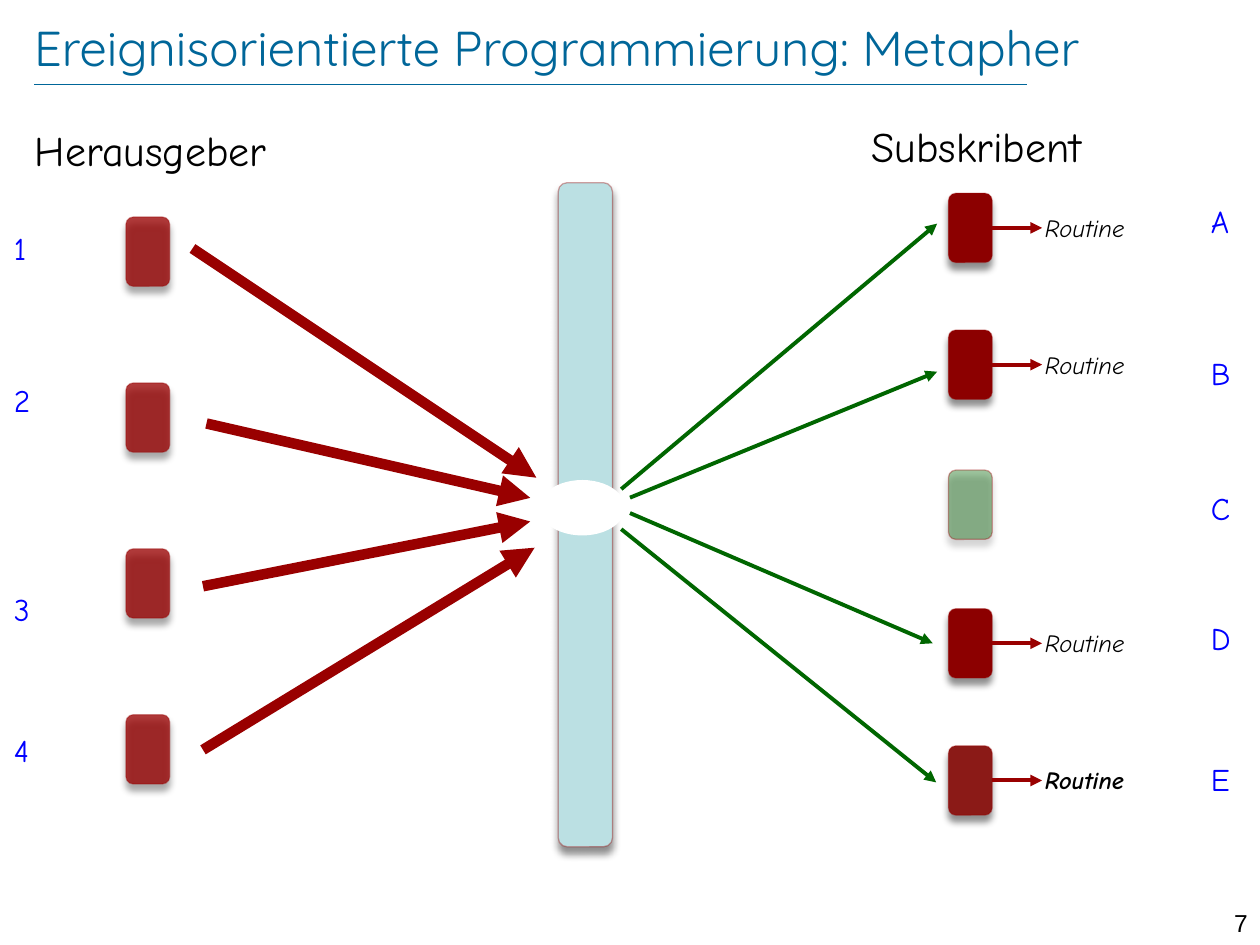
from lxml import etree
from pptx import Presentation
from pptx.dml.color import RGBColor
from pptx.enum import shapes, text
from pptx.oxml import ns, parse_xml
from pptx.util import Pt

COLORS = {
    "heading": "006699",
    "text": "000000",
    "label": "0000FF",
    "event": "990000",
    "notify": "006600",
    "active": "8C0000",
    "mixed": "8B1A17",
    "bus": "BBE0E3",
    "gap": "FFFFFF",
}
HAND_FONT = "Comic Neue"
NODE_WIDTH, NODE_HEIGHT = 25, 39.6
PUBLISHER_LEFT, PUBLISHER_TOP, PUBLISHER_PITCH = 72, 124, 94.8
SUBSCRIBER_LEFT = 542

SHADOW = (
    f'<a:effectLst {ns.nsdecls("a")}>'
    '<a:outerShdw blurRad="50800" dist="50800" dir="5400000" rotWithShape="0">'
    '<a:srgbClr val="000000"><a:alpha val="43000"/></a:srgbClr>'
    "</a:outerShdw></a:effectLst>"
)

# Label top, arrow start, arrow end
PUBLISHERS = [
    ("1", 131, (110, 142), (306.5, 273)),
    ("2", 218, (118, 242), (303, 284.5)),
    ("3", 337, (116, 335), (303, 298)),
    ("4", 417.6, (116, 428.5), (305.5, 313)),
]

# Label, label top, node top, fill, opacity, arrow ends, bold routine
SUBSCRIBERS = [
    ("A", 115.2, 110.4, "active", 100, ((355, 279.5), (535.5, 127.8)), False),
    ("B", 202.3, 188.6, "active", 100, ((360, 284.4), (535.5, 212.4)), False),
    ("C", 279.4, 268.6, "notify", 38, None, False),
    ("D", 353.5, 347.8, "active", 100, ((360, 293.2), (533, 367.6)), False),
    ("E", 434.2, 426.2, "mixed", 100, ((355, 302.4), (535, 447.1)), True),
]


def rgb(color):
    return RGBColor.from_string(COLORS[color])


def add_label(slide, words, left, top, width, height, size, color="text",
              font=HAND_FONT, bold=False, italic=False):
    box = slide.shapes.add_textbox(Pt(left), Pt(top), Pt(width), Pt(height))
    frame = box.text_frame
    frame.word_wrap = True
    frame.margin_left = frame.margin_right = 0
    frame.margin_top = frame.margin_bottom = 0
    run = frame.paragraphs[0].add_run()
    run.text = words
    run.font.name = font
    run.font.size = Pt(size)
    run.font.bold = bold
    run.font.italic = italic
    run.font.color.rgb = rgb(color)
    return frame


def add_node(slide, left, top, width, height, color, opacity):
    """Rounded box with a faint outline and a soft shadow below."""
    node = slide.shapes.add_shape(
        shapes.MSO_SHAPE.ROUNDED_RECTANGLE,
        Pt(left), Pt(top), Pt(width), Pt(height))
    node.fill.solid()
    node.fill.fore_color.rgb = rgb(color)
    node.line.color.rgb = rgb("event")
    node.line.width = Pt(0.75)
    properties = node.element.spPr
    tints = list(properties.iter(ns.qn("a:srgbClr")))
    for tint, percent in zip(tints, (opacity, 34)):
        etree.SubElement(tint, ns.qn("a:alpha")).set("val", str(percent * 1000))
    properties.append(parse_xml(SHADOW))
    return node


def add_line(slide, start, end, color, width, arrow=True):
    line = slide.shapes.add_connector(
        shapes.MSO_CONNECTOR.STRAIGHT,
        Pt(start[0]), Pt(start[1]), Pt(end[0]), Pt(end[1]))
    line.line.color.rgb = rgb(color)
    line.line.width = Pt(width)
    if arrow:
        outline = line.line._get_or_add_ln()
        etree.SubElement(outline, ns.qn("a:tailEnd")).set("type", "triangle")
    etree.SubElement(line.element.spPr, ns.qn("a:effectLst"))
    return line


def add_header(slide):
    add_line(slide, (19.5, 48.2), (586.8, 48.2), "heading", 0.25, arrow=False)
    title = add_label(slide, "Ereignisorientierte Programmierung: Metapher",
                      19.5, 9.4, 652.3, 34.6, 28, "heading", "Quicksand")
    title.vertical_anchor = text.MSO_ANCHOR.MIDDLE
    number = add_label(slide, "7", 680, 519, 33, 17, 14, font="Arial")
    number.paragraphs[0].alignment = text.PP_ALIGN.RIGHT
    add_label(slide, "Herausgeber", 20, 71.3, 211, 28.8, 24)
    add_label(slide, "Subskribent", 498.2, 69.1, 151.2, 28.8, 24)


def add_bus(slide):
    """Vertical bar with the opening that all events pass through."""
    add_node(slide, 319, 104.4, 31, 379.5, "bus", 100)
    opening = slide.shapes.add_shape(
        shapes.MSO_SHAPE.OVAL, Pt(308.2), Pt(274.3), Pt(49), Pt(31.7))
    opening.shadow.inherit = False
    opening.fill.solid()
    opening.fill.fore_color.rgb = rgb("gap")
    opening.line.fill.background()


def add_publishers(slide):
    for row, (label, label_top, start, end) in enumerate(PUBLISHERS):
        top = PUBLISHER_TOP + row * PUBLISHER_PITCH
        add_node(slide, PUBLISHER_LEFT, top, NODE_WIDTH, NODE_HEIGHT, "event", 77)
        add_line(slide, start, end, "event", 6)
        add_label(slide, label, 8, label_top, 16, 21.6, 18, "label")


def add_subscribers(slide):
    right = SUBSCRIBER_LEFT + NODE_WIDTH
    for label, label_top, top, color, opacity, notice, bold in SUBSCRIBERS:
        node = add_node(slide, SUBSCRIBER_LEFT, top, NODE_WIDTH, NODE_HEIGHT,
                        color, opacity)
        add_label(slide, label, 692, label_top, 16, 21.6, 18, "label")
        if notice:
            middle = top + NODE_HEIGHT / 2
            add_line(slide, *notice, "notify", 2.25)
            call = add_line(slide, (right, middle), (595.5, middle), "event", 2.25)
            call.begin_connect(node, 3)
            add_label(slide, "Routine", 597, top + 11.2, 61.2, 16.8, 14,
                      bold=bold, italic=True)


def main():
    deck = Presentation()
    deck.slide_width, deck.slide_height = Pt(720), Pt(540)
    slide = deck.slides.add_slide(deck.slide_layouts[6])
    add_header(slide)
    add_bus(slide)
    add_publishers(slide)
    add_subscribers(slide)
    deck.save("out.pptx")


if __name__ == "__main__":
    main()
